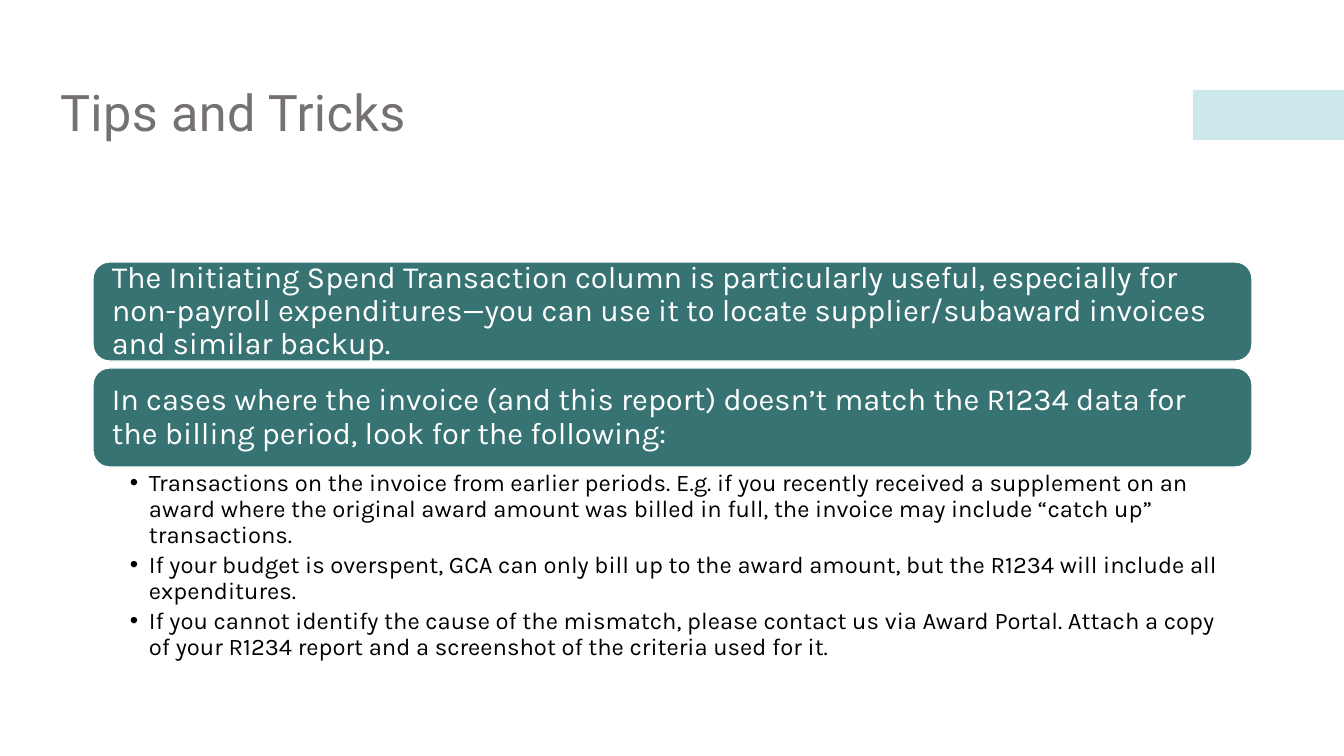
from lxml.etree import SubElement
from pptx import Presentation
from pptx.dml.color import RGBColor
from pptx.enum.shapes import MSO_SHAPE
from pptx.enum.text import MSO_ANCHOR, MSO_AUTO_SIZE, PP_ALIGN
from pptx.oxml.ns import qn
from pptx.util import Emu, Pt

COLORS = {
    "title": "767171",
    "accent": "9CD3D9",
    "panel": "387373",
    "white": "FFFFFF",
    "black": "000000",
}
PANELS = [
    "The Initiating Spend Transaction column is particularly useful, especially for "
    "non-payroll expenditures—you can use it to locate supplier/subaward invoices "
    "and similar backup.",
    "In cases where the invoice (and this report) doesn’t match the R1234 data for the "
    "billing period, look for the following:",
]
CHECKS = [
    "Transactions on the invoice from earlier periods. E.g. if you recently received a "
    "supplement on an award where the original award amount was billed in full, the "
    "invoice may include “catch up” transactions.",
    "If your budget is overspent, GCA can only bill up to the award amount, but the R1234 "
    "will include all expenditures.",
    "If you cannot identify the cause of the mismatch, please contact us via Award Portal. "
    "Attach a copy of your R1234 report and a screenshot of the criteria used for it.",
]
PANEL_LEFT, PANEL_TOP, PANEL_WIDTH, PANEL_HEIGHT, PANEL_STEP = 93, 262, 1159, 99, 106


def px(length):
    return Emu(round(length * 914400 / 100.8))


def color(name):
    return RGBColor.from_string(COLORS[name])


def place(box, left, top, width, height):
    box.left, box.top, box.width, box.height = map(px, (left, top, width, height))


def set_frame(box, margins, anchor):
    frame = box.text_frame
    frame.word_wrap = True
    frame.auto_size = MSO_AUTO_SIZE.NONE
    frame.vertical_anchor = anchor
    frame.margin_left, frame.margin_top, frame.margin_right, frame.margin_bottom = map(px, margins)
    return frame


def write(para, text, *, font, size, fill, after=0, tracking=0):
    para.alignment = PP_ALIGN.LEFT
    para.line_spacing = 0.9
    para.space_before = Pt(0)
    para.space_after = Pt(after)
    span = para.add_run()
    span.text = text
    span.font.name = font
    span.font.size = Pt(size)
    span.font.color.rgb = color(fill)
    if tracking:
        span.font._element.set("spc", str(tracking))


def add_bullet(para, indent):
    properties = para._p.get_or_add_pPr()
    properties.set("marL", str(px(indent)))
    properties.set("indent", str(-px(indent)))
    SubElement(properties, qn("a:buFont"), typeface="Arial")
    SubElement(properties, qn("a:buChar"), char="•")


def add_block(page, kind, bounds, fill):
    block = page.shapes.add_shape(kind, *map(px, bounds))
    block.shadow.inherit = False
    block.fill.solid()
    block.fill.fore_color.rgb = color(fill)
    block.line.fill.background()
    return block


def add_accent(page):
    accent = add_block(page, MSO_SHAPE.RECTANGLE, (1193, 90, 151, 50), "accent")
    tint = accent._element.spPr.find(qn("a:solidFill"))[0]
    SubElement(tint, qn("a:alpha"), val="50000")


def add_panel(page, top, text):
    bounds = (PANEL_LEFT, top, PANEL_WIDTH, PANEL_HEIGHT)
    panel = add_block(page, MSO_SHAPE.ROUNDED_RECTANGLE, bounds, "panel")
    panel.line.color.rgb = color("white")
    panel.line.width = Pt(1)
    frame = set_frame(panel, (14, 14, 14, 14), MSO_ANCHOR.MIDDLE)
    write(frame.paragraphs[0], text, font="Karla", size=22, fill="white")


def fill_title(box):
    place(box, 50, 42, 1243, 146)
    frame = set_frame(box, (10, 5, 10, 5), MSO_ANCHOR.MIDDLE)
    write(frame.paragraphs[0], "Tips and Tricks", font="Roboto", size=36, fill="title", tracking=30)


def fill_checks(box):
    place(box, PANEL_LEFT, PANEL_TOP + len(PANELS) * PANEL_STEP - 6, PANEL_WIDTH, 153)
    frame = set_frame(box, (37, 3, 17, 3), MSO_ANCHOR.TOP)
    for index, text in enumerate(CHECKS):
        para = frame.add_paragraph() if index else frame.paragraphs[0]
        write(para, text, font="Karla", size=17, fill="black", after=3.4)
        add_bullet(para, 19)


def main():
    deck = Presentation()
    deck.slide_width, deck.slide_height = px(1344), px(756)
    page = deck.slides.add_slide(deck.slide_layouts[1])
    add_accent(page)
    fill_title(page.shapes.title)
    for index, text in enumerate(PANELS):
        add_panel(page, PANEL_TOP + index * PANEL_STEP, text)
    fill_checks(page.placeholders[1])
    deck.save("out.pptx")


if __name__ == "__main__":
    main()
